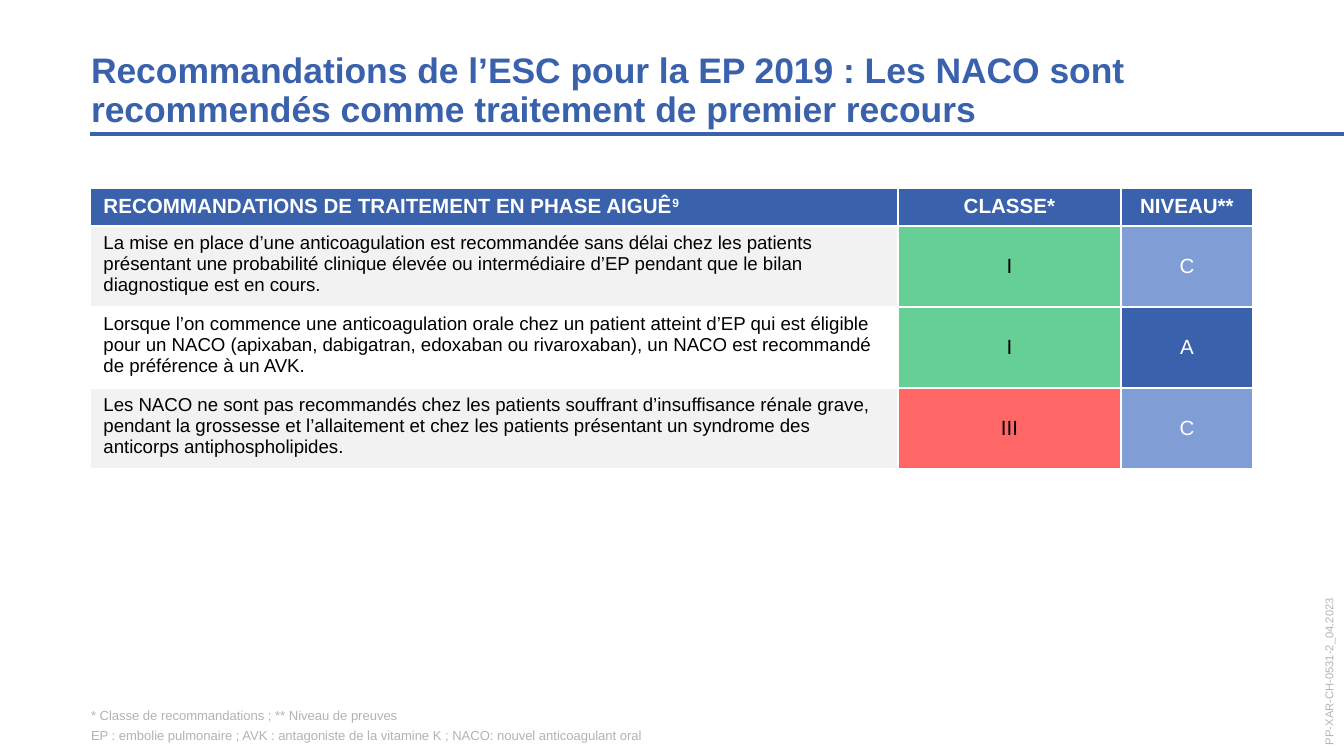
from lxml import etree
from pptx import Presentation
from pptx import util as u
from pptx.dml.color import RGBColor
from pptx.enum import shapes, text
from pptx.oxml.ns import qn

PX = 914400 / 134.4
COLORS = {
    "blue": "3961AC", "light_blue": "809ED5", "grey": "B3B2B5", "stripe": "F2F2F2",
    "green": "00B050", "red": "FF0000", "white": "FFFFFF", "black": "000000",
}
LEFT = 91
TABLE_LEFT, TABLE_TOP = 90, 188
COL_WIDTHS = [808, 223, 132]
ROW_HEIGHTS = [38, 81, 81, 81]
HEADERS = [["RECOMMANDATIONS DE TRAITEMENT EN PHASE AIGUÊ", "9"], ["CLASSE*"], ["NIVEAU**"]]
CLASS_FILLS = {"I": "green", "III": "red"}
LEVEL_FILLS = {"A": "blue", "C": "light_blue"}
ROWS = [
    ("La mise en place d’une anticoagulation est recommandée sans délai chez les patients "
     "présentant une probabilité clinique élevée ou intermédiaire d’EP pendant que le bilan "
     "diagnostique est en cours.", "I", "C"),
    ("Lorsque l’on commence une anticoagulation orale chez un patient atteint d’EP qui est "
     "éligible pour un NACO (apixaban, dabigatran, edoxaban ou rivaroxaban), un NACO est "
     "recommandé de préférence à un AVK.", "I", "A"),
    ("Les NACO ne sont pas recommandés chez les patients souffrant d’insuffisance rénale grave, "
     "pendant la grossesse et l’allaitement et chez les patients présentant un syndrome des "
     "anticorps antiphospholipides.", "III", "C"),
]


def px(n):
    return u.Emu(round(n * PX))


def rgb(name):
    return RGBColor.from_string(COLORS[name])


class Deck:
    def __init__(self, slide, font="Arial"):
        self.s, self.font = slide, font

    def run(self, p, words, size, color, bold=False):
        r = p.add_run()
        r.text = words
        f = r.font
        f.name, f.size, f.bold = self.font, u.Pt(size), bold
        f.color.rgb = rgb(color)
        return r

    def label(self, x, y, w, h, lines, size, color, bold=False, anchor="BOTTOM",
              spacing=1.0, after=0, rotation=0):
        sp = self.s.shapes.add_textbox(px(x), px(y), px(w), px(h))
        sp.rotation = rotation
        tf = sp.text_frame
        tf.word_wrap = True
        tf.vertical_anchor = text.MSO_ANCHOR[anchor]
        tf.margin_left = tf.margin_right = tf.margin_top = tf.margin_bottom = 0
        for i, line in enumerate(lines):
            p = tf.add_paragraph() if i else tf.paragraphs[0]
            p.line_spacing, p.space_after = spacing, u.Pt(after)
            self.run(p, line, size, color, bold)

    def rule(self, x1, x2, y, color, weight):
        line = self.s.shapes.add_connector(
            shapes.MSO_CONNECTOR.STRAIGHT, px(x1), px(y), px(x2), px(y))
        line.line.color.rgb, line.line.width = rgb(color), u.Pt(weight)
        etree.SubElement(line._element.spPr, qn("a:effectLst"))

    def table(self, x, y, widths, heights):
        tbl = self.s.shapes.add_table(len(heights), len(widths), px(x), px(y),
                                      px(sum(widths)), px(sum(heights))).table
        for col, w in zip(tbl.columns, widths):
            col.width = px(w)
        for row, h in zip(tbl.rows, heights):
            row.height = px(h)
        return tbl

    def cell(self, c, words, size, color, fill, bold=False, center=False, middle=False,
             alpha=None):
        """Fill a cell; every word group after the first is set as superscript."""
        c.fill.solid()
        c.fill.fore_color.rgb = rgb(fill)
        if alpha:
            clr = c._tc.tcPr.find(".//" + qn("a:srgbClr"))
            etree.SubElement(clr, qn("a:alpha"), val=str(alpha * 1000))
        if middle:
            c.vertical_anchor = text.MSO_ANCHOR.MIDDLE
        p = c.text_frame.paragraphs[0]
        p.alignment = text.PP_ALIGN.CENTER if center else text.PP_ALIGN.LEFT
        for i, part in enumerate(words):
            r = self.run(p, part, size, color, bold)
            if i:
                r.font._element.set("baseline", "30000")


def main():
    prs = Presentation()
    prs.slide_width, prs.slide_height = px(1344), px(756)
    deck = Deck(prs.slides.add_slide(prs.slide_layouts[6]))

    deck.label(1235, 643, 188, 16, ["PP-XAR-CH-0531-2_04.2023"], 6, "grey",
               anchor="MIDDLE", rotation=270)
    deck.rule(TABLE_LEFT, 1344, 134, "blue", 2.25)
    deck.label(LEFT, 52, 1216, 78,
               ["Recommandations de l’ESC pour la EP 2019 : Les NACO sont "
                "recommendés comme traitement de premier recours"],
               19, "blue", bold=True, spacing=0.9)
    deck.label(LEFT, 708, 1163, 35,
               ["* Classe de recommandations ; ** Niveau de preuves",
                "EP : embolie pulmonaire ; AVK : antagoniste de la vitamine K ; "
                "NACO: nouvel anticoagulant oral"], 7, "grey", after=2)

    tbl = deck.table(TABLE_LEFT, TABLE_TOP, COL_WIDTHS, ROW_HEIGHTS)
    for j, words in enumerate(HEADERS):
        deck.cell(tbl.cell(0, j), words, 11, "white", "blue", bold=True, center=j > 0)
    for i, (advice, grade, level) in enumerate(ROWS, 1):
        deck.cell(tbl.cell(i, 0), [advice], 10, "black", "stripe" if i % 2 else "white")
        deck.cell(tbl.cell(i, 1), [grade], 11, "black", CLASS_FILLS[grade],
                  center=True, middle=True, alpha=60)
        deck.cell(tbl.cell(i, 2), [level], 11, "white", LEVEL_FILLS[level],
                  center=True, middle=True)

    prs.save("out.pptx")


if __name__ == "__main__":
    main()
